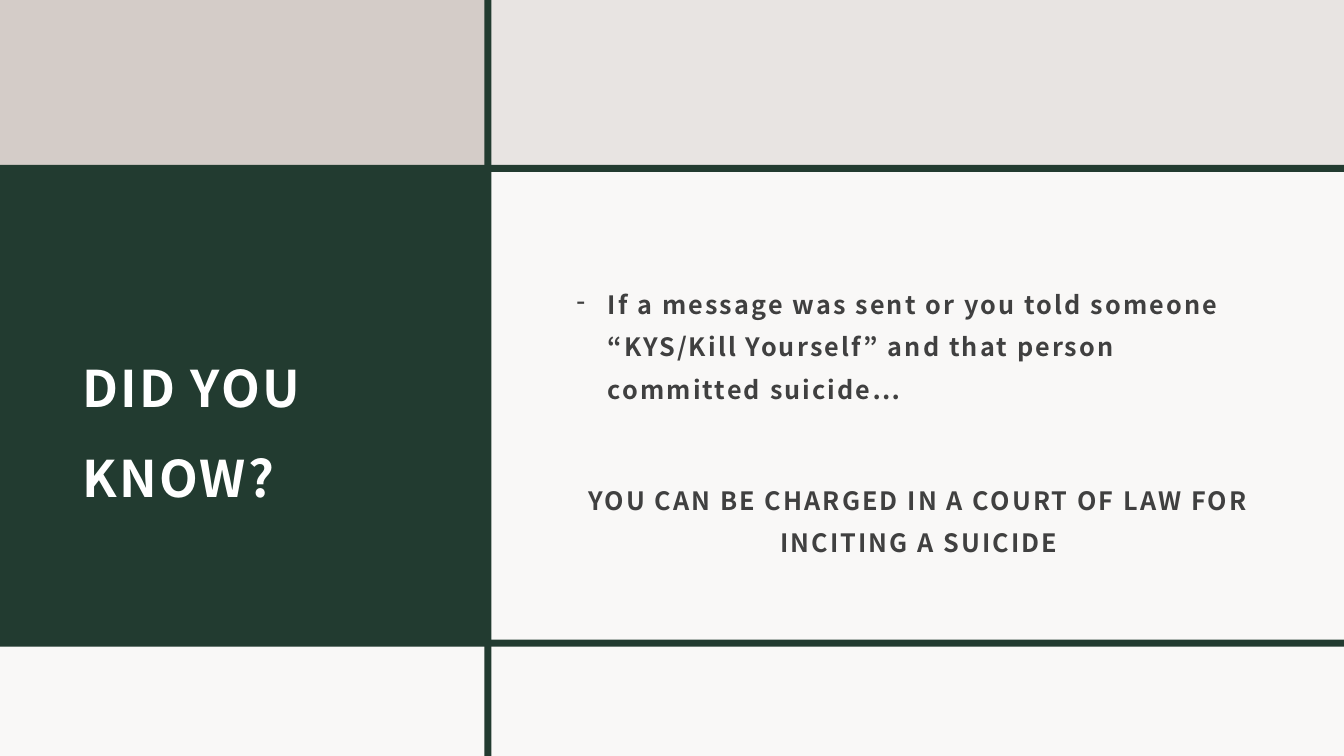
from lxml import etree
from pptx import Presentation
from pptx.dml.color import RGBColor
from pptx.enum.shapes import MSO_SHAPE
from pptx.enum.text import MSO_ANCHOR, PP_ALIGN
from pptx.oxml.ns import qn
from pptx.util import Inches, Pt

RECTANGLE = MSO_SHAPE.RECTANGLE
MIDDLE = MSO_ANCHOR.MIDDLE
LEFT, CENTER = PP_ALIGN.LEFT, PP_ALIGN.CENTER

COLORS = {
    "sand": "E8E4E2",
    "rose": "D4CCC8",
    "green": "223B30",
    "white": "FFFFFF",
    "ink": "404040",
}
FONT = "Noto Sans CJK JP"
WIDTH, HEIGHT = 13.33, 7.5
COLUMNS = (0, 4.84, WIDTH)
ROWS = (0, 1.66, 6.41, HEIGHT)
RULE = 0.07
TEXT_TOP, TEXT_HEIGHT = 2.14, 3.98
HANGING = 0.31


def add_panel(slide, left, top, right, bottom, color, opacity=100):
    """Fill the rectangle between two corners, optionally see-through."""
    panel = slide.shapes.add_shape(
        RECTANGLE, Inches(left), Inches(top), Inches(right - left), Inches(bottom - top))
    panel.shadow.inherit = False
    panel.line.fill.background()
    panel.fill.solid()
    panel.fill.fore_color.rgb = RGBColor.from_string(COLORS[color])
    if opacity < 100:
        tint = panel._element.spPr.find(qn("a:solidFill"))[0]
        etree.SubElement(tint, qn("a:alpha"), val=str(opacity * 1000))


def add_row_rule(slide, center):
    """Draw a green rule across the slide."""
    add_panel(slide, 0, center - RULE / 2, WIDTH, center + RULE / 2, "green")


def add_column_rule(slide, center):
    """Draw a green rule down the slide."""
    add_panel(slide, center - RULE / 2, 0, center + RULE / 2, HEIGHT, "green")


def add_text_area(slide, left, width):
    """Add a wrapping, vertically centred text area and return its frame."""
    area = slide.shapes.add_textbox(
        Inches(left), Inches(TEXT_TOP), Inches(width), Inches(TEXT_HEIGHT))
    frame = area.text_frame
    frame.word_wrap = True
    frame.vertical_anchor = MIDDLE
    frame.margin_left = frame.margin_top = frame.margin_right = Inches(0.12)
    frame.margin_bottom = Inches(0.1)
    return frame


def write(paragraph, text, size, color, spacing, before=0, align=LEFT):
    """Write bold, letter-spaced text into a paragraph."""
    run = paragraph.add_run()
    run.text = text
    run._r.get_or_add_rPr().set("spc", "150")
    paragraph.alignment = align
    paragraph.line_spacing = spacing
    paragraph.space_before = Pt(before)
    font = paragraph.font
    font.name, font.size, font.bold = FONT, Pt(size), True
    font.color.rgb = RGBColor.from_string(COLORS[color])


def add_dash(paragraph):
    """Give a paragraph a hanging dash bullet."""
    properties = paragraph._p.get_or_add_pPr()
    properties.set("marL", str(Inches(HANGING)))
    properties.set("indent", str(-Inches(HANGING)))
    dash = etree.Element(qn("a:buChar"), char="-")
    properties.find(qn("a:defRPr")).addprevious(dash)


def main():
    """Build the slide and save it."""
    deck = Presentation()
    deck.slide_width, deck.slide_height = Inches(WIDTH), Inches(HEIGHT)
    slide = deck.slides.add_slide(deck.slide_layouts[6])
    left, divide, right = COLUMNS
    top, upper, lower, bottom = ROWS

    add_panel(slide, left, top, right, bottom, "sand")
    add_panel(slide, left, upper, divide, lower, "green")
    add_panel(slide, left, top, divide, upper, "rose")
    add_panel(slide, divide, upper, right, lower, "white", 75)
    add_panel(slide, left, lower, right, bottom, "white", 75)
    add_row_rule(slide, upper + 0.01)
    add_row_rule(slide, lower - 0.03)
    add_column_rule(slide, divide)

    title = add_text_area(slide, 0.7, 3.73)
    write(title.paragraphs[0], "DID YOU KNOW?", 36, "white", 1.5)

    body = add_text_area(slide, 5.6, 7.03)
    situation = body.paragraphs[0]
    write(situation, "If a message was sent or you told someone “KYS/Kill Yourself” "
          "and that person committed suicide…", 18, "ink", 1.4, 9.3)
    add_dash(situation)
    write(body.add_paragraph(), "YOU CAN BE CHARGED IN A COURT OF LAW FOR INCITING A SUICIDE",
          18, "ink", 1.4, 49, CENTER)

    deck.save("out.pptx")


if __name__ == "__main__":
    main()
